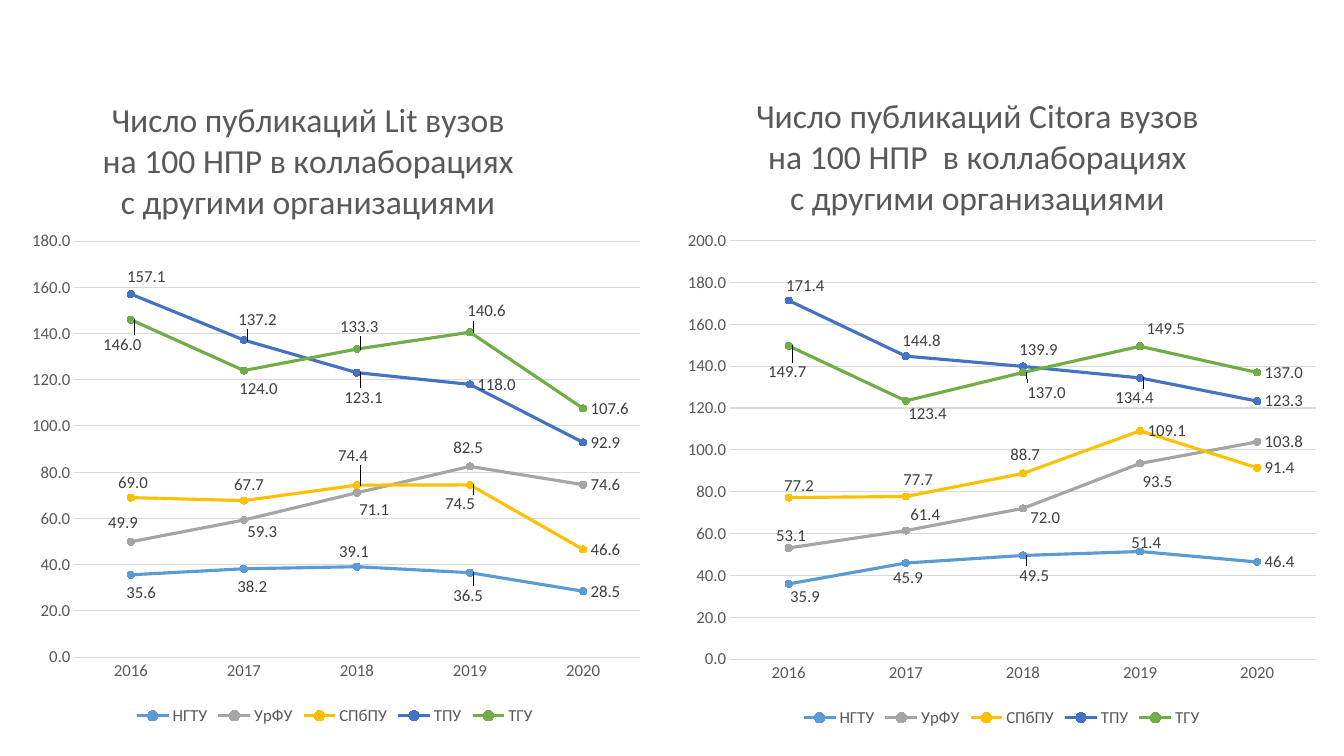
from lxml import etree
from pptx import Presentation
from pptx.chart.data import CategoryChartData
from pptx.dml.color import RGBColor
from pptx.enum.chart import (XL_CHART_TYPE, XL_LABEL_POSITION, XL_LEGEND_POSITION,
                             XL_MARKER_STYLE, XL_TICK_MARK)
from pptx.enum.text import PP_ALIGN
from pptx.oxml.ns import qn
from pptx.util import Inches, Pt

LINE_MARKERS = XL_CHART_TYPE.LINE_MARKERS
LABEL_RIGHT = XL_LABEL_POSITION.RIGHT
LEGEND_BOTTOM = XL_LEGEND_POSITION.BOTTOM
CIRCLE = XL_MARKER_STYLE.CIRCLE
NO_TICK = XL_TICK_MARK.NONE
CENTER = PP_ALIGN.CENTER

FONT = "Calibri"
COLORS = {
    "text": "595959", "label": "404040", "grid": "D9D9D9",
    "НГТУ": "5B9BD5", "УрФУ": "A5A5A5", "СПбПУ": "FFC000",
    "ТПУ": "4472C4", "ТГУ": "70AD47",
}
YEARS = ["2016", "2017", "2018", "2019", "2020"]

# Each series: values, then label shifts (inches) from the right-hand position
CHARTS = [
    {
        "title": ["Число публикаций Lit вузов", "на 100 НПР в коллаборациях",
                  "с другими организациями"],
        "box": (0.17, 0.69, 6.3, 6.55),
        "title_at": (0.13, 0.04),
        "plot": (0.09, 0.26, 0.89, 0.63),
        "maximum": 180,
        "series": {
            "НГТУ": ([35.6, 38.2, 39.1, 36.5, 28.5],
                     [(-0.12, 0.18), (-0.14, 0.18), (-0.25, -0.15), (-0.24, 0.23)]),
            "УрФУ": ([49.9, 59.3, 71.1, 82.5, 74.6],
                     [(-0.3, -0.19), (-0.04, 0.12), (-0.05, 0.17), (-0.24, -0.19)]),
            "СПбПУ": ([69.0, 67.7, 74.4, 74.5, 46.6],
                      [(-0.2, -0.15), (-0.17, -0.16), (-0.26, -0.29), (-0.32, 0.19)]),
            "ТПУ": ([157.1, 137.2, 123.1, 118.0, 92.9],
                    [(-0.11, -0.17), (-0.13, -0.2), (-0.2, 0.25)]),
            "ТГУ": ([146.0, 124.0, 133.3, 140.6, 107.6],
                    [(-0.35, 0.25), (-0.12, 0.18), (-0.24, -0.22), (-0.1, -0.21)]),
        },
    },
    {
        "title": ["Число публикаций Citora вузов", "на 100 НПР  в коллаборациях",
                  "с другими организациями"],
        "box": (6.69, 0.65, 6.49, 6.61),
        "title_at": (0.12, 0.04),
        "plot": (0.085, 0.263, 0.895, 0.628),
        "maximum": 200,
        "series": {
            "НГТУ": ([35.9, 45.9, 49.5, 51.4, 46.4],
                     [(-0.06, 0.13), (-0.2, 0.15), (-0.11, 0.2), (-0.16, -0.09)]),
            "УрФУ": ([53.1, 61.4, 72.0, 93.5, 103.8],
                     [(-0.2, -0.12), (-0.03, -0.16), (0, 0.09), (-0.05, 0.18)]),
            "СПбПУ": ([77.2, 77.7, 88.7, 109.1, 91.4],
                      [(-0.12, -0.12), (-0.1, -0.17), (-0.2, -0.19)]),
            "ТПУ": ([171.4, 144.8, 139.9, 134.4, 123.3],
                    [(-0.1, -0.15), (-0.11, -0.15), (-0.11, -0.17), (-0.32, 0.2)]),
            "ТГУ": ([149.7, 123.4, 137.0, 149.5, 137.0],
                    [(-0.28, 0.26), (-0.05, 0.13), (-0.03, 0.2), (-0.01, -0.18)]),
        },
    },
]


def color(name):
    return RGBColor.from_string(COLORS[name])


def style_font(font, color_name, size=12):
    font.name = FONT
    font.size = Pt(size)
    font.bold = False
    font.color.rgb = color(color_name)


def style_line(line, color_name, width):
    line.color.rgb = color(color_name)
    line.width = Pt(width)


def set_layout(element, index, settings):
    """Place a chart part by hand; settings are written in schema order."""
    for old_layout in element.findall(qn("c:layout")):
        element.remove(old_layout)
    layout = etree.Element(qn("c:layout"))
    manual = etree.SubElement(layout, qn("c:manualLayout"))
    for tag, value in settings.items():
        etree.SubElement(manual, qn("c:" + tag)).set("val", str(value))
    element.insert(index, layout)


def add_title(chart, lines, position):
    title = chart.chart_title
    text_frame = title.text_frame
    text_frame.text = "\n".join(lines)
    for paragraph in text_frame.paragraphs:
        paragraph.alignment = CENTER
        style_font(paragraph.runs[0].font, "text", 24)
    left, top = position
    set_layout(title.element, 1, {"xMode": "edge", "yMode": "edge", "x": left, "y": top})


def style_axes(chart, maximum):
    years, values = chart.category_axis, chart.value_axis
    for axis in (years, values):
        axis.major_tick_mark = axis.minor_tick_mark = NO_TICK
        style_font(axis.tick_labels.font, "text")
    style_line(years.format.line, "grid", 0.75)
    values.format.line.fill.background()
    style_line(values.major_gridlines.format.line, "grid", 0.75)
    values.minimum_scale, values.maximum_scale, values.major_unit = 0, maximum, 20
    values.tick_labels.number_format = "0.0"
    values.tick_labels.number_format_is_linked = False


def style_series(series, shifts, width, height):
    series.smooth = False
    style_line(series.format.line, series.name, 2.25)
    series.marker.style = CIRCLE
    series.marker.size = 5
    series.marker.format.fill.solid()
    series.marker.format.fill.fore_color.rgb = color(series.name)
    style_line(series.marker.format.line, series.name, 0.75)

    # Value labels, shifted point by point
    labels = series.data_labels
    labels.show_value = True
    labels.position = LABEL_RIGHT
    labels.number_format = "0.0"
    labels.number_format_is_linked = False
    style_font(labels.font, "label")
    for index in range(len(shifts)):
        label = series.points[index].data_label
        label.position = LABEL_RIGHT
        style_font(label.font, "label")
    for element, (right, down) in zip(series._element.iter(qn("c:dLbl")), shifts):
        set_layout(element, 1, {"x": round(right / width, 4), "y": round(down / height, 4)})


def add_line_chart(slide, content):
    data = CategoryChartData(number_format="0.0")
    data.categories = YEARS
    for name, (values, shifts) in content["series"].items():
        data.add_series(name, values)
    box = content["box"]
    frame = slide.shapes.add_chart(LINE_MARKERS, *map(Inches, box), data)
    chart = frame.chart
    style_font(chart.font, "text")
    add_title(chart, content["title"], content["title_at"])
    style_axes(chart, content["maximum"])

    chart.has_legend = True
    chart.legend.position = LEGEND_BOTTOM
    chart.legend.include_in_layout = False
    style_font(chart.legend.font, "text")

    plot = chart.plots[0]
    plot.vary_by_categories = False
    for series in plot.series:
        style_series(series, content["series"][series.name][1], box[2], box[3])
    plot_area = chart.element.find(".//" + qn("c:plotArea"))
    set_layout(plot_area, 0, {"layoutTarget": "inner", "xMode": "edge", "yMode": "edge",
                              **dict(zip("xywh", content["plot"]))})


def main():
    presentation = Presentation()
    presentation.slide_width = Inches(13.33)
    presentation.slide_height = Inches(7.5)
    blank_layout = presentation.slide_layouts[6]
    slide = presentation.slides.add_slide(blank_layout)
    for content in CHARTS:
        add_line_chart(slide, content)
    presentation.save("out.pptx")


if __name__ == "__main__":
    main()
